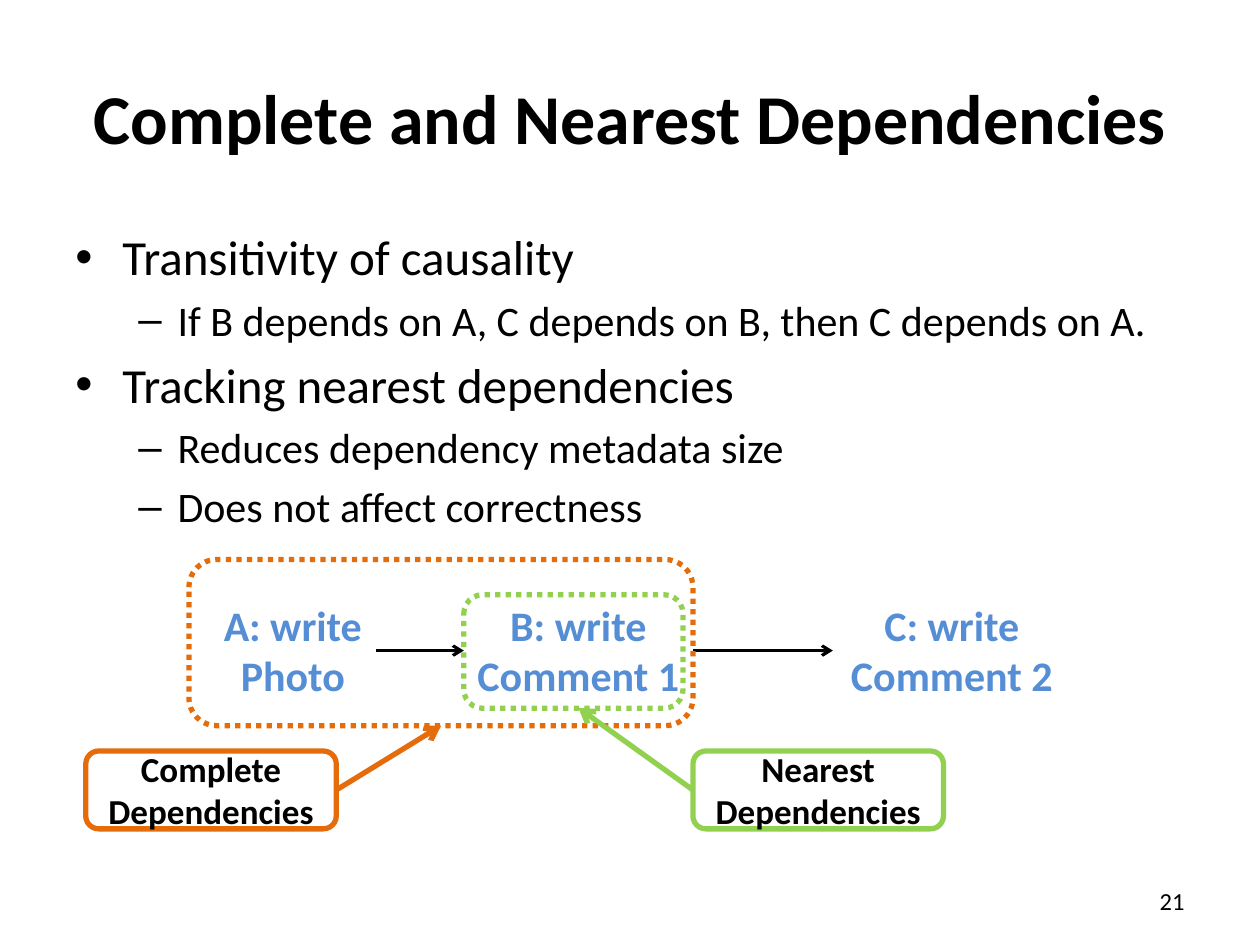
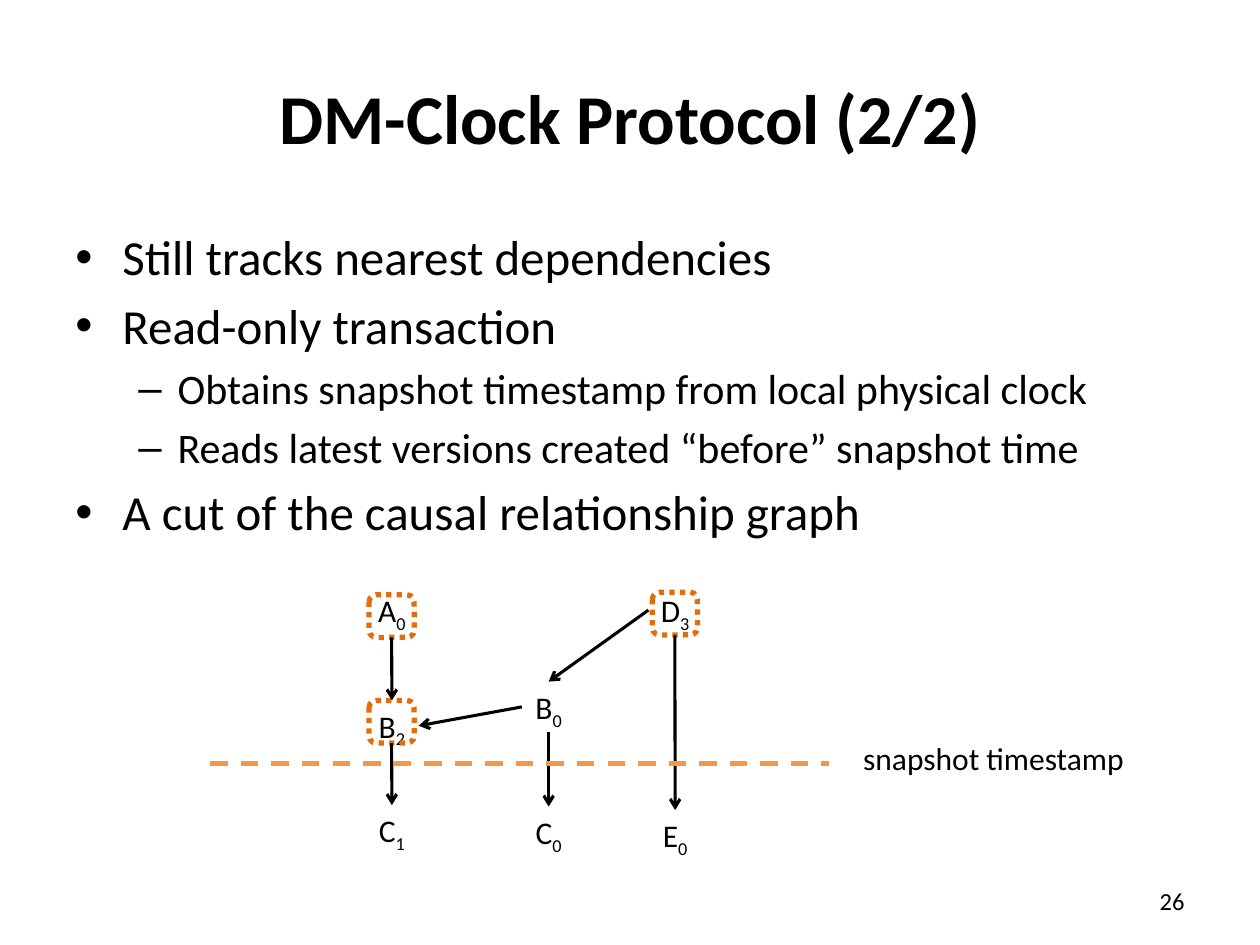
from pptx import Presentation
from pptx.dml.color import RGBColor
from pptx.enum.dml import MSO_LINE
from pptx.enum.shapes import MSO_CONNECTOR, MSO_SHAPE
from pptx.enum.text import MSO_ANCHOR, PP_ALIGN
from pptx.oxml.ns import qn
from pptx.util import Cm, Pt
from lxml.etree import SubElement

FONT = "Calibri"
BLACK, WHITE = "000000", "FFFFFF"
ORANGE, LIGHT_ORANGE = "E46C0A", "F79646"
GREEN, BLUE = "92D050", "558ED5"

# Level: bullet, font size, left margin in cm, hanging indent in cm
LEVELS = [("•", 28, 0.95, 0.95), ("–", 24, 2.06, 0.79)]

# Connection sites of rectangles
TOP, LEFT, BOTTOM, RIGHT = range(4)


def rgb(color):
    return RGBColor.from_string(color)


def add_run(p, text, size, color=BLACK, bold=False):
    r = p.add_run()
    r.text = text
    r.font.name = FONT
    r.font.size = Pt(size)
    r.font.bold = bold
    r.font.color.rgb = rgb(color)
    return r


def add_text_box(slide, left, top, width, height, wrap=False):
    sp = slide.shapes.add_textbox(Cm(left), Cm(top), Cm(width), Cm(height))
    sp.text_frame.word_wrap = wrap
    return sp


def add_title(slide, text):
    title = slide.shapes.title
    title.left, title.top = Cm(1.27), Cm(0.76)
    title.width, title.height = Cm(22.86), Cm(3.18)
    title.text_frame.vertical_anchor = MSO_ANCHOR.MIDDLE
    p = title.text_frame.paragraphs[0]
    p.alignment = PP_ALIGN.CENTER
    add_run(p, text, 40, bold=True)


def add_bullets(slide, items):
    tf = add_text_box(slide, 1.27, 4.45, 22.86, 12.57, wrap=True).text_frame
    for i, (level, text) in enumerate(items):
        bullet, size, margin, hanging = LEVELS[level]
        p = tf.add_paragraph() if i else tf.paragraphs[0]
        p.level = level
        p.space_before = Pt(size * 0.2)
        add_run(p, text, size)
        pPr = p._p.get_or_add_pPr()
        pPr.set("marL", str(Cm(margin)))
        pPr.set("indent", str(-Cm(hanging)))
        SubElement(pPr, qn("a:buFont"), typeface="Arial")
        SubElement(pPr, qn("a:buChar"), char=bullet)


def add_page_number(slide, number):
    tf = add_text_box(slide, 18.2, 17.65, 5.93, 1.01, wrap=True).text_frame
    tf.vertical_anchor = MSO_ANCHOR.MIDDLE
    p = tf.paragraphs[0]
    p.alignment = PP_ALIGN.RIGHT
    add_run(p, str(number), 14)


def add_outline(slide, left, top, width, height, color, dash=None):
    """Add a rounded rectangle without a fill."""
    sp = slide.shapes.add_shape(MSO_SHAPE.ROUNDED_RECTANGLE,
                                Cm(left), Cm(top), Cm(width), Cm(height))
    sp.shadow.inherit = False
    sp.fill.background()
    sp.line.color.rgb = rgb(color)
    sp.line.width = Pt(3)
    if dash:
        sp.line.dash_style = dash
    return sp


def add_callout(slide, left, text, color):
    sp = add_outline(slide, left, 15.14, 5.05, 1.57, color)
    sp.fill.solid()
    sp.fill.fore_color.rgb = rgb(WHITE)
    tf = sp.text_frame
    tf.word_wrap = True
    tf.vertical_anchor = MSO_ANCHOR.MIDDLE
    p = tf.paragraphs[0]
    p.alignment = PP_ALIGN.CENTER
    add_run(p, text, 20, bold=True)
    return sp


def add_event(slide, left, width, lines):
    sp = add_text_box(slide, left, 11.96, width, 2.31)
    p = sp.text_frame.paragraphs[0]
    p.alignment = PP_ALIGN.CENTER
    for i, line in enumerate(lines):
        if i:
            p.add_line_break()
        add_run(p, line, 24, BLUE, bold=True)
    return sp


def add_version(slide, center, top, name):
    """Add a letter with its subscript version number."""
    sp = add_text_box(slide, center - 0.54, top, 1.08, 1.02)
    p = sp.text_frame.paragraphs[0]
    p.alignment = PP_ALIGN.CENTER
    add_run(p, name[0], 18)
    subscript = add_run(p, name[1:], 18)
    subscript.font._element.set("baseline", "-25000")
    return sp


def add_line(slide, color, width, start=(0, 0), end=(0, 0)):
    line = slide.shapes.add_connector(MSO_CONNECTOR.STRAIGHT,
                                      *map(Cm, (*start, *end)))
    line.line.color.rgb = rgb(color)
    line.line.width = Pt(width)
    SubElement(line.element.spPr, qn("a:effectLst"))
    return line


def add_arrow(slide, source, source_site, target, target_site,
              color=BLACK, width=1.75):
    arrow = add_line(slide, color, width)
    arrow.begin_connect(source, source_site)
    arrow.end_connect(target, target_site)
    SubElement(arrow.element.spPr.find(qn("a:ln")), qn("a:tailEnd"), type="arrow")


def add_content_slide(prs, title, bullets, number):
    slide = prs.slides.add_slide(prs.slide_layouts.get_by_name("Title Only"))
    add_title(slide, title)
    add_bullets(slide, bullets)
    add_page_number(slide, number)
    return slide


def build_dependencies(prs):
    slide = add_content_slide(prs, "Complete and Nearest Dependencies", [
        (0, "Transitivity of causality"),
        (1, "If B depends on A, C depends on B, then C depends on A."),
        (0, "Tracking nearest dependencies"),
        (1, "Reduces dependency metadata size"),
        (1, "Does not affect correctness"),
    ], 21)
    photo = add_event(slide, 4.24, 3.33, ["A: write", "Photo"])
    comment1 = add_event(slide, 9.35, 4.62, ["B: write", "Comment 1"])
    comment2 = add_event(slide, 16.79, 4.8, ["C: write", "Comment 2"])
    add_arrow(slide, photo, RIGHT, comment1, LEFT)
    add_arrow(slide, comment1, RIGHT, comment2, LEFT)

    complete = add_outline(slide, 3.81, 11.28, 10.16, 3.35, ORANGE, MSO_LINE.ROUND_DOT)
    add_outline(slide, 9.35, 11.99, 4.42, 2.29, GREEN, MSO_LINE.ROUND_DOT)
    complete_label = add_callout(slide, 1.73, "Complete Dependencies", ORANGE)
    nearest_label = add_callout(slide, 13.97, "Nearest Dependencies", GREEN)
    add_arrow(slide, complete_label, RIGHT, complete, BOTTOM, ORANGE, 3)
    add_arrow(slide, nearest_label, LEFT, comment1, BOTTOM, GREEN, 3)


def build_dm_clock(prs):
    slide = add_content_slide(prs, "DM-Clock Protocol (2/2)", [
        (0, "Still tracks nearest dependencies"),
        (0, "Read-only transaction"),
        (1, "Obtains snapshot timestamp from local physical clock"),
        (1, "Reads latest versions created “before” snapshot time"),
        (0, "A cut of the causal relationship graph"),
    ], 26)
    left, middle, right = 7.9, 11.06, 13.61
    places = {
        "A0": (left, 11.79), "B2": (left, 14.12), "C1": (left, 16.23),
        "B0": (middle, 13.74), "C0": (middle, 16.26),
        "D3": (right, 11.79), "E0": (right, 16.33),
    }
    versions = {name: add_version(slide, *place, name)
                for name, place in places.items()}
    frames = {name: add_outline(slide, places[name][0] - 0.46, top, 0.91, 0.86,
                                ORANGE, MSO_LINE.ROUND_DOT)
              for name, top in (("A0", 11.99), ("B2", 14.12), ("D3", 11.94))}

    for source, target in (("A0", "B2"), ("B2", "C1"), ("B0", "C0"), ("D3", "E0")):
        add_arrow(slide, frames.get(source, versions[source]), BOTTOM,
                  versions[target], TOP)
    add_arrow(slide, versions["B0"], LEFT, versions["B2"], RIGHT)
    add_arrow(slide, versions["D3"], LEFT, versions["B0"], TOP)

    cut = add_line(slide, LIGHT_ORANGE, 2.5, (4.24, 15.39), (16.71, 15.39))
    cut.line.dash_style = MSO_LINE.DASH
    label = add_text_box(slide, 17.15, 14.78, 5.82, 1.02)
    add_run(label.text_frame.paragraphs[0], "snapshot timestamp", 18)


def main():
    prs = Presentation()
    prs.slide_width, prs.slide_height = Cm(25.4), Cm(19.05)
    build_dependencies(prs)
    build_dm_clock(prs)
    prs.save("out.pptx")


if __name__ == "__main__":
    main()
